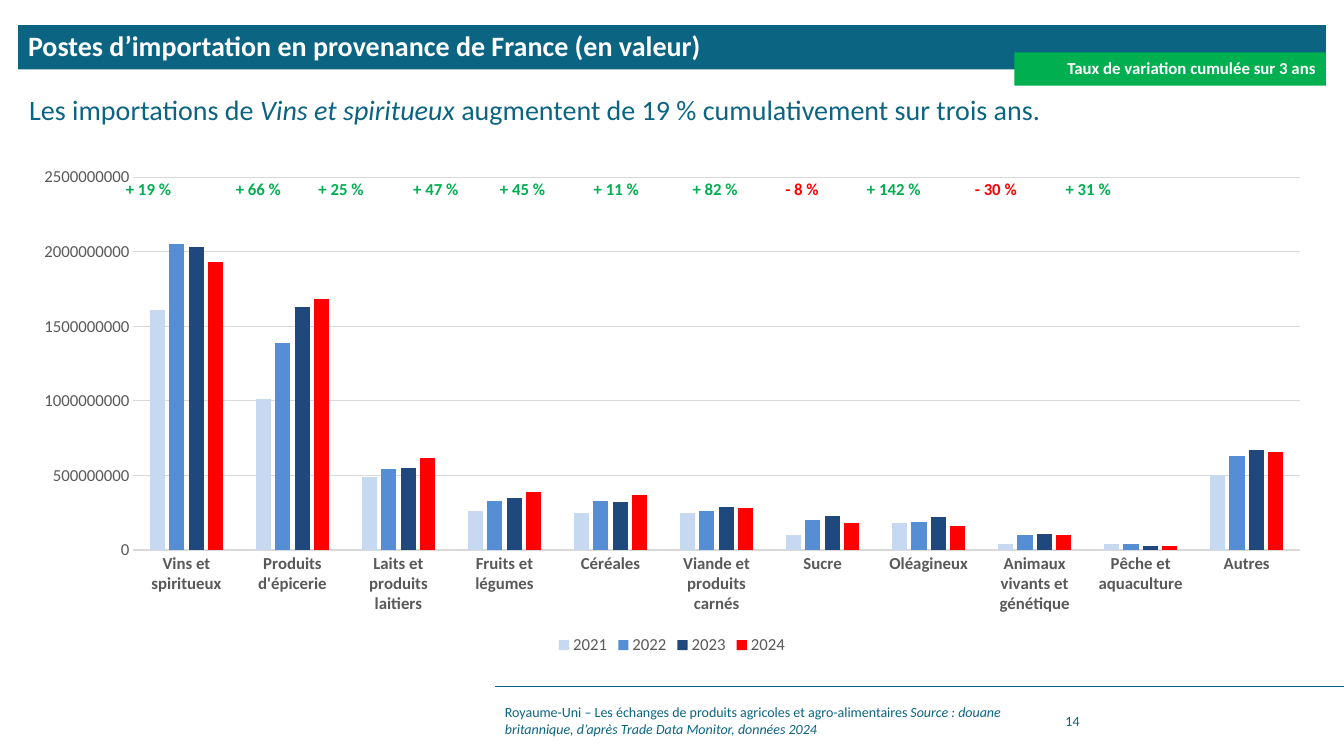
"""Build the slide on French farm and food exports to the United Kingdom."""
from dataclasses import dataclass

from lxml import etree
from pptx import Presentation
from pptx.chart.data import CategoryChartData
from pptx.dml.color import RGBColor
from pptx.enum.chart import XL_CHART_TYPE, XL_LEGEND_POSITION, XL_TICK_MARK
from pptx.enum.shapes import MSO_CONNECTOR, MSO_SHAPE
from pptx.enum.text import MSO_ANCHOR, PP_ALIGN
from pptx.oxml.ns import qn
from pptx.util import Inches, Pt

COLUMN, BOTTOM, NO_TICK = XL_CHART_TYPE.COLUMN_CLUSTERED, XL_LEGEND_POSITION.BOTTOM, XL_TICK_MARK.NONE
LINE, RECT = MSO_CONNECTOR.STRAIGHT, MSO_SHAPE.RECTANGLE
TOP, MIDDLE = MSO_ANCHOR.TOP, MSO_ANCHOR.MIDDLE
LEFT, RIGHT = PP_ALIGN.LEFT, PP_ALIGN.RIGHT

WIDTH, HEIGHT = Inches(13.33), Inches(7.5)
FACE = "Calibri"
HUES = {
    "teal": "0B6482", "white": "FFFFFF", "green": "00B050", "red": "FF0000",
    "gray": "595959", "rule": "D9D9D9",
    "2021": "C6D9F1", "2022": "558ED5", "2023": "1F497D", "2024": "FF0000",
}


@dataclass
class Run:
    """A stretch of text with its own look."""
    text: str
    hue: str = "teal"
    bold: bool = False
    slant: bool = False


@dataclass
class Box:
    """A text block; place holds percentages of the slide's size."""
    place: tuple[float, float, float, float]
    runs: list[Run]
    size: int
    fill: str = ""
    anchor: MSO_ANCHOR = MIDDLE
    align: PP_ALIGN = LEFT
    space: float = 1.0
    tabs: tuple[float, ...] = ()


RATES = ["+ 19 %", "+ 66 %", "+ 25 %", "+ 47 %", "+ 45 %", "+ 11 %",
         "+ 82 %", "- 8 %", "+ 142 %", "- 30 %", "+ 31 %"]
STOPS = (1.09, 1.91, 2.85, 3.71, 4.64, 5.62, 6.54, 7.35, 8.42, 9.32)

PLOT = (1.35, 20.8, 97.3, 66.4)
GROUPS = ["Vins et spiritueux", "Produits d'épicerie", "Laits et produits laitiers",
          "Fruits et légumes", "Céréales", "Viande et produits carnés", "Sucre",
          "Oléagineux", "Animaux vivants et génétique", "Pêche et aquaculture", "Autres"]
UNIT = 10_000_000
SALES = {
    "2021": [161, 101, 49, 26, 25, 25, 10, 18, 4, 4, 50],
    "2022": [205, 139, 54, 33, 33, 26, 20, 19, 10, 4, 63],
    "2023": [203, 163, 55, 35, 32, 29, 23, 22, 11, 3, 67],
    "2024": [193, 168, 62, 39, 37, 28, 18, 16, 10, 3, 66],
}

HEADS = [
    Box((1.35, 3.33, 97.3, 5.87),
        [Run("Postes d’importation en provenance de France (en valeur)", "white", True)],
        20, "teal", space=0.9),
    Box((1.43, 12.4, 97.22, 5.2),
        [Run("Les importations de "), Run("Vins et spiritueux ", slant=True),
         Run("augmentent de 19 % cumulativement sur trois ans.")],
        20, anchor=TOP, space=0.8),
    Box((75.47, 6.93, 23.18, 4.4),
        [Run("Taux de variation cumulée sur 3 ans", "white", True)],
        12, "green", align=RIGHT, space=0.9),
]
NOTES = [
    Box((8.63, 22.93, 88.6, 5.2),
        [Run(("\t" if i else "") + rate, "red" if rate[0] == "-" else "green", True)
         for i, rate in enumerate(RATES)],
        12, anchor=TOP, tabs=STOPS),
    Box((36.83, 92.67, 40.74, 5.33),
        [Run("Royaume-Uni – Les échanges de produits agricoles et agro-alimentaires "),
         Run("Source : douane britannique, d’après Trade Data Monitor, données 2024", slant=True)],
        10),
    Box((78.54, 92.67, 7.43, 5.33), [Run("14")], 10),
]


def tint(name: str) -> RGBColor:
    """Return the colour of a given name."""
    return RGBColor.from_string(HUES[name])


def style(item, **looks) -> None:
    """Set each format value on the item."""
    for name, value in looks.items():
        setattr(item, name, value)


def font(item, size: int, hue: str, bold: bool = False, slant: bool = False) -> None:
    """Set face, size, weight and colour of a font."""
    style(item, name=FACE, size=Pt(size), bold=bold, italic=slant)
    item.color.rgb = tint(hue)


def scale(place: tuple[float, ...]) -> list[int]:
    """Turn percentages of the slide into lengths."""
    return [int(part * side / 100) for part, side in zip(place, (WIDTH, HEIGHT) * 2)]


def write(slide, box: Box) -> None:
    """Draw a text block, filled or plain."""
    spot = scale(box.place)
    if box.fill:
        shape = slide.shapes.add_shape(RECT, *spot)
        shape.shadow.inherit = False
        shape.fill.solid()
        shape.fill.fore_color.rgb = tint(box.fill)
        shape.line.fill.background()
    else:
        shape = slide.shapes.add_textbox(*spot)
    frame = shape.text_frame
    style(frame, word_wrap=True, vertical_anchor=box.anchor)
    para = frame.paragraphs[0]
    style(para, alignment=box.align, line_spacing=box.space)
    if box.tabs:
        stops = etree.SubElement(para._p.get_or_add_pPr(), qn("a:tabLst"))
        for stop in box.tabs:
            etree.SubElement(stops, qn("a:tab"), pos=str(Inches(stop)), algn="l")
    for part in box.runs:
        run = para.add_run()
        run.text = part.text
        font(run.font, box.size, part.hue, part.bold, part.slant)


def rule(slide) -> None:
    """Draw the line above the footer."""
    line = slide.shapes.add_connector(LINE, *scale((100, 90.8, 36.83, 90.8)))
    line.line.color.rgb = tint("teal")
    line.line.width = Pt(0.5)
    etree.SubElement(line._element.spPr, qn("a:effectLst"))


def edge(line) -> None:
    """Give a chart line its thin gray look."""
    line.color.rgb = tint("rule")
    line.width = Pt(0.75)


def plot(slide) -> None:
    """Draw the column chart of yearly imports."""
    data = CategoryChartData(number_format="General")
    data.categories = GROUPS
    for year, sums in SALES.items():
        data.add_series(year, [value * UNIT for value in sums])
    chart = slide.shapes.add_chart(COLUMN, *scale(PLOT), data).chart
    style(chart, has_title=False, has_legend=True)
    font(chart.font, 12, "gray")
    style(chart.legend, position=BOTTOM, include_in_layout=False)
    font(chart.legend.font, 12, "gray")
    bars = chart.plots[0]
    style(bars, gap_width=219, overlap=-27, vary_by_categories=False)
    for row in bars.series:
        row.format.fill.solid()
        row.format.fill.fore_color.rgb = tint(row.name)
    base, side = chart.category_axis, chart.value_axis
    for axis in (base, side):
        style(axis, major_tick_mark=NO_TICK, minor_tick_mark=NO_TICK)
        font(axis.tick_labels.font, 12, "gray", axis is base)
    edge(base.format.line)
    style(side, minimum_scale=0, maximum_scale=250 * UNIT, major_unit=50 * UNIT,
          has_major_gridlines=True)
    edge(side.major_gridlines.format.line)
    side.format.line.fill.background()


def main() -> None:
    """Build and save the slide."""
    deck = Presentation()
    style(deck, slide_width=WIDTH, slide_height=HEIGHT)
    slide = deck.slides.add_slide(deck.slide_layouts[6])
    rule(slide)
    for box in HEADS:
        write(slide, box)
    plot(slide)
    for box in NOTES:
        write(slide, box)
    deck.save("out.pptx")


if __name__ == "__main__":
    main()
